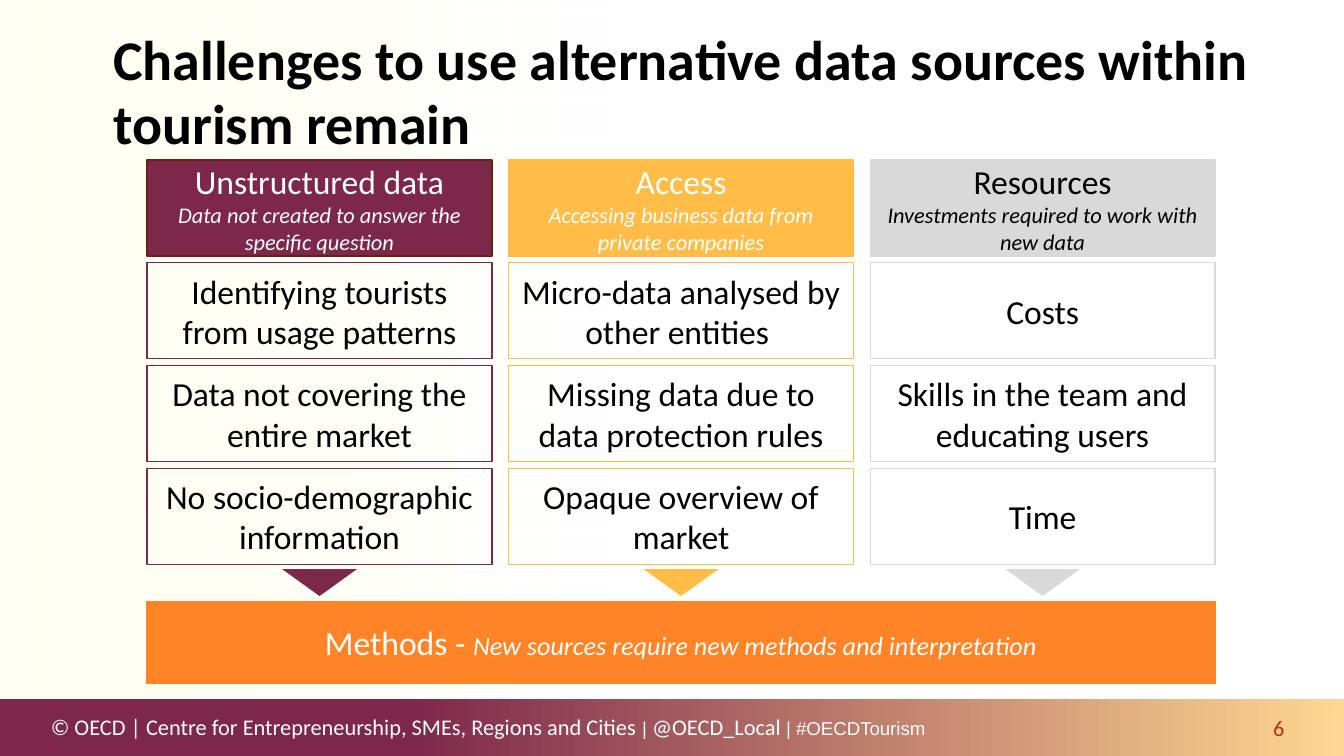
import pptx
import pptx.dml.color
import pptx.enum.shapes
import pptx.enum.text
import pptx.oxml.ns
import pptx.util
from lxml import etree

PX = 4572  # EMU per px, 200 px to the inch
COLORS = {
    "white": "FFFFFF", "black": "000000", "plum": "7D274A", "brown": "66210F",
    "amber": "FFBD47", "sand": "FFD791", "cream": "FFFFE7", "grey": "D9D9D9",
    "orange": "FF8427", "rust": "B53513",
}
SHAPES = pptx.enum.shapes.MSO_SHAPE
CENTER = pptx.enum.text.PP_ALIGN.CENTER
LEFT = pptx.enum.text.PP_ALIGN.LEFT

COLUMNS = [
    {"fill": "plum", "line": "brown", "text": "white", "margin": 8,
     "title": "Unstructured data",
     "subtitle": "Data not created to answer the specific question",
     "cards": ["Identifying tourists from usage patterns",
               "Data not covering the entire market",
               "No socio-demographic information"]},
    {"fill": "amber", "line": "amber", "text": "white", "margin": 20,
     "title": "Access",
     "subtitle": "Accessing business data from private companies",
     "cards": ["Micro-data analysed by other entities ",
               "Missing data due to data protection rules",
               "Opaque overview of market"]},
    {"fill": "grey", "line": "grey", "text": "black", "margin": 20,
     "title": "Resources",
     "subtitle": "Investments required to work with new data",
     "cards": ["Costs", "Skills in the team and educating users", "Time"]},
]


def px(length):
    return pptx.util.Emu(length * PX)


def rgb(name):
    return pptx.dml.color.RGBColor.from_string(COLORS[name])


def run_of(text, size, color, font="Calibri", bold=False, italic=False):
    return {"text": text, "size": size, "color": color, "font": font,
            "bold": bold, "italic": italic}


def write_text(shape, paragraphs, align=CENTER, wrap=True, margins=(20, 20), spacing=None):
    frame = shape.text_frame
    frame.word_wrap = wrap
    frame.vertical_anchor = pptx.enum.text.MSO_ANCHOR.MIDDLE
    frame.margin_left, frame.margin_right = map(px, margins)
    frame.margin_top = frame.margin_bottom = px(10)
    for index, runs in enumerate(paragraphs):
        paragraph = frame.add_paragraph() if index else frame.paragraphs[0]
        paragraph.alignment = align
        if spacing:
            paragraph.line_spacing = pptx.util.Pt(spacing)
        for part in runs:
            run = paragraph.add_run()
            run.text = part["text"]
            run.font.name = part["font"]
            run.font.size = pptx.util.Pt(part["size"])
            run.font.bold = part["bold"]
            run.font.italic = part["italic"]
            run.font.color.rgb = rgb(part["color"])


def add_box(slide, box, fill=None, line=None, kind=SHAPES.RECTANGLE):
    shape = slide.shapes.add_shape(kind, *map(px, box))
    shape.shadow.inherit = False
    if fill:
        shape.fill.solid()
        shape.fill.fore_color.rgb = rgb(fill)
    else:
        shape.fill.background()
    if line:
        shape.line.color.rgb = rgb(line)
        shape.line.width = pptx.util.Pt(0.75)
    else:
        shape.line.fill.background()
    return shape


def add_gradient_box(slide, box, right, left, left_position=1.0, left_alpha=None):
    shape = add_box(slide, box)
    shape.fill.gradient()
    shape.fill.gradient_angle = 180
    stops = shape.fill.gradient_stops
    for stop, color, position in zip(stops, (right, left), (0, left_position)):
        stop.color.rgb = rgb(color)
        stop.position = position
    if left_alpha:
        tag = pptx.oxml.ns.qn("a:srgbClr")
        left_color = list(shape.fill._xPr.iter(tag))[-1]
        etree.SubElement(left_color, pptx.oxml.ns.qn("a:alpha"), val=str(left_alpha * 1000))


def add_text_box(slide, box, runs, **options):
    write_text(slide.shapes.add_textbox(*map(px, box)), [runs], **options)


def add_footer(slide, box):
    left, top, width, height = box
    add_gradient_box(slide, box, "sand", "plum", left_position=0.7)
    credit = [
        run_of("© OECD | Centre for Entrepreneurship, SMEs, Regions and Cities", 12, "white"),
        run_of(" | ", 10, "white", font="Arial"),
        run_of("@OECD_Local", 12, "white"),
        run_of(" | #OECDTourism", 10, "white", font="Arial"),
    ]
    add_text_box(slide, (left + 56, top + 22, 1740, 40), credit,
                 align=LEFT, margins=(20, 0))
    add_text_box(slide, (left + width - 134, top + 23, 74, 40),
                 [run_of("6", 12, "rust")], wrap=False)


def add_title(slide, box):
    title = run_of("Challenges to use alternative data sources within tourism remain",
                   30, "black", bold=True)
    add_text_box(slide, box, [title], align=LEFT, spacing=34)


def add_column(slide, box, column):
    left, top, width, height = box
    card_height, pitch = 143, 153
    arrow_width, arrow_height = 111, 40

    # Heading
    heading = add_box(slide, (left, top, width, card_height), column["fill"], column["line"])
    write_text(heading, [[run_of(column["title"], 18, column["text"])],
                         [run_of(column["subtitle"], 12, column["text"], italic=True)]],
               margins=(column["margin"], column["margin"]))

    # Challenges
    for row, text in enumerate(column["cards"], start=1):
        card = add_box(slide, (left, top + row * pitch, width, card_height),
                       line=column["fill"])
        write_text(card, [[run_of(text, 18, "black")]])

    # Arrow down to the methods
    arrow = add_box(slide, (left + (width - arrow_width) // 2, top + height - arrow_height,
                            arrow_width, arrow_height),
                    column["fill"], kind=SHAPES.ISOSCELES_TRIANGLE)
    arrow.rotation = 180


def add_columns(slide, box):
    left, top, width, height = box
    gap = 25
    column_width = (width - gap * (len(COLUMNS) - 1)) // len(COLUMNS)
    for index, column in enumerate(COLUMNS):
        column_left = left + index * (column_width + gap)
        add_column(slide, (column_left, top, column_width, height), column)


def add_methods(slide, box):
    bar = add_box(slide, box, "orange", "orange")
    write_text(bar, [[run_of("Methods - ", 18, "white"),
                      run_of("New sources require new methods and interpretation",
                             14, "white", italic=True)]])


def main():
    presentation = pptx.Presentation()
    presentation.slide_width, presentation.slide_height = px(2000), px(1125)
    slide = presentation.slides.add_slide(presentation.slide_layouts[6])
    slide.background.fill.solid()
    slide.background.fill.fore_color.rgb = rgb("white")

    add_gradient_box(slide, (0, 0, 904, 1040), "white", "cream", left_alpha=50)
    add_footer(slide, (0, 1040, 2000, 85))
    add_title(slide, (149, 31, 1796, 212))
    add_columns(slide, (219, 238, 1589, 649))
    add_methods(slide, (219, 895, 1589, 122))
    presentation.save("out.pptx")


if __name__ == "__main__":
    main()
